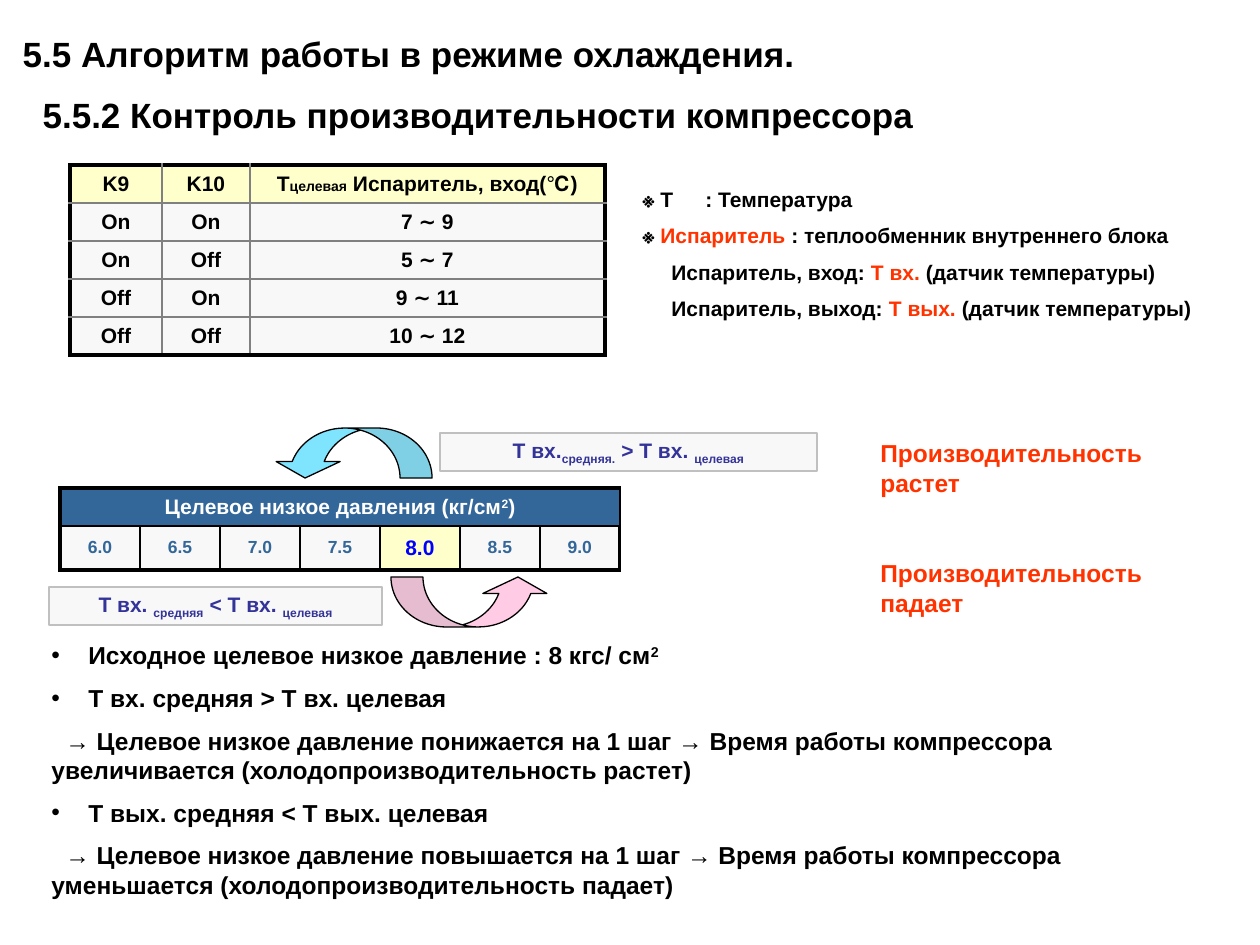
from lxml import etree
from pptx import Presentation
from pptx.dml.color import RGBColor
from pptx.enum.shapes import MSO_SHAPE as Preset
from pptx.enum.text import MSO_ANCHOR as Anchor, MSO_AUTO_SIZE as AutoSize, PP_ALIGN as Align
from pptx.oxml.ns import qn
from pptx.util import Pt

PX = 914400 / 126
COLORS = {
    "black": "000000", "white": "FFFFFF", "red": "FF3300", "navy": "333399",
    "steel": "336699", "blue": "0000FF", "pale": "F8F8F8", "cream": "FFFFCC",
    "gray": "808080", "silver": "C0C0C0", "pink": "FF99CC", "cyan": "00CCFF",
}
SUPER, SUB = 30000, -25000


def px(value):
    return round(value * PX)


def rgb(name):
    return RGBColor.from_string(COLORS[name])


def add_child(parent, tag, **attributes):
    return etree.SubElement(parent, qn(tag), {key: str(value) for key, value in attributes.items()})


def add_runs(paragraph, runs, size, color="black"):
    """Each run is a string or a tuple of text and its own style."""
    for item in runs:
        text, style = (item, {}) if isinstance(item, str) else item
        run = paragraph.add_run()
        run.text = text
        run.font.name = "Arial"
        run.font.bold = True
        run.font.size = Pt(style.get("size", size))
        run.font.color.rgb = rgb(style.get("color", color))
        if "baseline" in style:
            run._r.get_or_add_rPr().set("baseline", str(style["baseline"]))


def fill_text(frame, lines, size, color="black"):
    """Each line is a pair of runs and its indents (margin, first, bullet, tab)."""
    frame.word_wrap = True
    frame.auto_size = AutoSize.NONE
    frame.vertical_anchor = Anchor.TOP
    for index, (runs, layout) in enumerate(lines):
        paragraph = frame.add_paragraph() if index else frame.paragraphs[0]
        paragraph.alignment = Align.LEFT
        paragraph.space_before = Pt(round(size * 0.54, 1) if index else 0)
        properties = paragraph._p.get_or_add_pPr()
        properties.set("marL", str(px(layout.get("margin", 0))))
        properties.set("indent", str(px(layout.get("first", 0))))
        if "bullet" in layout:
            add_child(properties, "a:buFont", typeface="Arial")
            add_child(properties, "a:buChar", char=layout["bullet"])
        if "tab" in layout:
            tabs = add_child(properties, "a:tabLst")
            add_child(tabs, "a:tab", pos=px(layout["tab"]), algn="l")
        add_runs(paragraph, runs, size, color)


def add_text(slide, box, lines, size, color="black"):
    shape = slide.shapes.add_textbox(*map(px, box))
    fill_text(shape.text_frame, lines, size, color)


def add_title(slide, box, lines):
    title = slide.shapes.title
    title.left, title.top, title.width, title.height = map(px, box)
    fill_text(title.text_frame, lines, 20)


def set_border(cell, edge, color, width):
    line = add_child(cell._tc.get_or_add_tcPr(), f"a:ln{edge}", w=Pt(width))
    add_child(add_child(line, "a:solidFill"), "a:srgbClr", val=COLORS[color])


def add_grid(slide, left, top, widths, heights, inner):
    """Adds a table with a heavy black frame and thin inner lines."""
    rows, columns = len(heights), len(widths)
    box = map(px, (left, top, sum(widths), sum(heights)))
    table = slide.shapes.add_table(rows, columns, *box).table
    table.first_row = table.horz_banding = False
    for column, width in zip(table.columns, widths):
        column.width = px(width)
    for row, height in zip(table.rows, heights):
        row.height = px(height)
    for r in range(rows):
        for c in range(columns):
            outer = {"L": c == 0, "R": c == columns - 1, "T": r == 0, "B": r == rows - 1}
            for edge, heavy in outer.items():
                set_border(table.cell(r, c), edge, "black" if heavy else inner, 2.25 if heavy else 1)
    return table


def fill_cell(cell, runs, fill, size=12, color="black"):
    cell.fill.solid()
    cell.fill.fore_color.rgb = rgb(fill)
    cell.vertical_anchor = Anchor.MIDDLE
    paragraph = cell.text_frame.paragraphs[0]
    paragraph.alignment = Align.CENTER
    add_runs(paragraph, runs, size, color)


def add_target_table(slide, left, top):
    rows = [
        (["K9"], ["K10"], ["T", ("целевая", {"size": 8}), " Испаритель, вход(℃)"]),
        (["On"], ["On"], ["7 ∼ 9"]),
        (["On"], ["Off"], ["5 ∼ 7"]),
        (["Off"], ["On"], ["9 ∼ 11"]),
        (["Off"], ["Off"], ["10 ∼ 12"]),
    ]
    table = add_grid(slide, left, top, [92, 88, 355], [38] * len(rows), "gray")
    for r, row in enumerate(rows):
        for c, runs in enumerate(row):
            fill_cell(table.cell(r, c), runs, "pale" if r else "cream")


def add_pressure_scale(slide, left, top):
    values = ["6.0", "6.5", "7.0", "7.5", "8.0", "8.5", "9.0"]
    table = add_grid(slide, left, top, [80] * len(values), [38, 44], "black")
    header = table.cell(0, 0)
    header.merge(table.cell(0, len(values) - 1))
    fill_cell(header, ["Целевое низкое давления (кг/см", ("2", {"baseline": SUPER}), ")"],
              "steel", color="white")
    for c, value in enumerate(values):
        style = ("cream", 12, "blue") if value == "8.0" else ("pale", 10, "steel")
        fill_cell(table.cell(1, c), [value], *style)


def add_preset(slide, preset, box, fill, line):
    shape = slide.shapes.add_shape(preset, *map(px, box))
    shape.shadow.inherit = False
    shape.fill.solid()
    shape.fill.fore_color.rgb = rgb(fill)
    shape.line.color.rgb = rgb(line)
    shape.line.width = Pt(0.75)
    return shape


def add_step_arrow(slide, left, top, fill, rotation=0):
    arrow = add_preset(slide, Preset.CURVED_UP_ARROW, (left, top, 159, 50), fill, "black")
    arrow.rotation = rotation
    for index, value in enumerate((0.64, 1.28, 0.33)):
        arrow.adjustments[index] = value
    color = arrow.fill._xPr.find(qn("a:solidFill"))[0]
    add_child(color, "a:alpha", val=50000)


def add_condition(slide, box, runs):
    shape = add_preset(slide, Preset.RECTANGLE, box, "pale", "silver")
    shape.text_frame.vertical_anchor = Anchor.MIDDLE
    paragraph = shape.text_frame.paragraphs[0]
    paragraph.alignment = Align.CENTER
    add_runs(paragraph, runs, 12, "navy")


def add_notes_on_terms(slide, box):
    inset = {"margin": 29}
    sensor = "(датчик температуры)"
    add_text(slide, box, [
        (["※ T\t: Температура"], {"tab": 147}),
        (["※ ", ("Испаритель ", {"color": "red"}), ": теплообменник внутреннего блока"], {}),
        (["Испаритель, вход: ", ("Т вх. ", {"color": "red"}), sensor], inset),
        (["Испаритель, выход: ", ("Т вых. ", {"color": "red"}), sensor], inset),
    ], 12)


def add_rules(slide, box):
    bullet = {"margin": 37, "first": -37, "bullet": "•"}
    result = {"first": 14}
    add_text(slide, box, [
        (["Исходное целевое низкое давление : 8 кгс/ см", ("2", {"baseline": SUPER})], bullet),
        (["Т вх. средняя > Т вх. целевая"], bullet),
        (["→ Целевое низкое давление понижается на 1 шаг → Время работы компрессора "
          "увеличивается (холодопроизводительность растет)"], result),
        (["Т вых. средняя < Т вых. целевая"], bullet),
        (["→ Целевое низкое давление повышается на 1 шаг → Время работы компрессора "
          "уменьшается (холодопроизводительность падает)"], result),
    ], 14)


def main():
    presentation = Presentation()
    presentation.slide_width, presentation.slide_height = px(1260), px(945)
    slide = presentation.slides.add_slide(presentation.slide_layouts[5])

    # Title and definitions
    add_title(slide, (10, 26, 1038, 118), [
        (["5.5 Алгоритм работы в режиме охлаждения."], {}),
        (["5.5.2 Контроль производительности компрессора"], {"margin": 20}),
    ])
    add_target_table(slide, 70, 165)
    add_notes_on_terms(slide, (630, 180, 588, 152))

    # Pressure scale with its step arrows and conditions
    add_pressure_scale(slide, 60, 488)
    add_step_arrow(slide, 391, 577, "pink")
    add_step_arrow(slide, 273, 428, "cyan", rotation=180)
    low = {"baseline": SUB}
    add_condition(slide, (440, 433, 377, 38),
                  ["T вх.", ("средняя.", low), " > T вх. ", ("целевая", low)])
    add_condition(slide, (49, 587, 333, 38),
                  ["T вх. ", ("средняя", low), " < T вх. ", ("целевая", low)])

    # Effects on capacity and the control rules
    for top, effect in ((432, "растет"), (552, "падает")):
        add_text(slide, (868, top, 315, 72), [([f"Производительность {effect}"], {})], 14, "red")
    add_rules(slide, (39, 634, 1176, 280))

    presentation.save("out.pptx")


if __name__ == "__main__":
    main()
